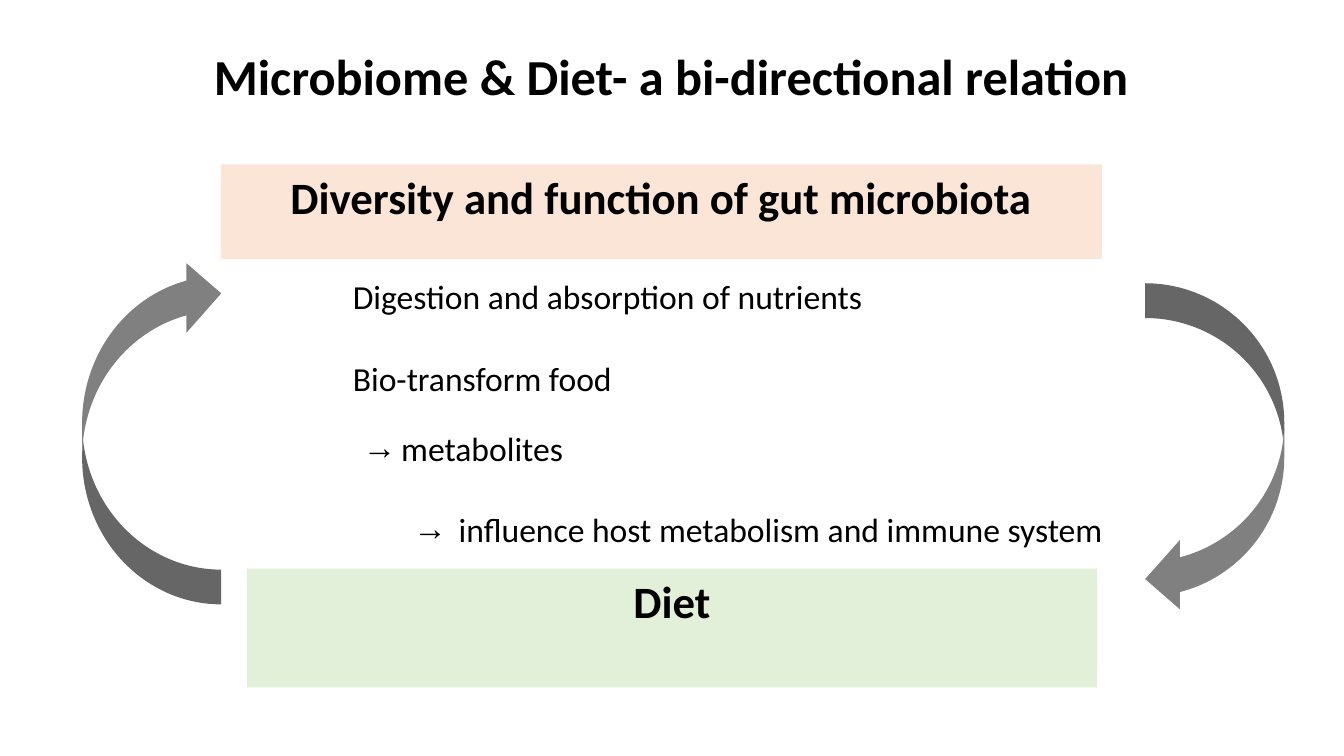
from lxml import etree
from pptx import Presentation
from pptx.dml.color import RGBColor
from pptx.enum.shapes import MSO_SHAPE as Preset
from pptx.enum.text import MSO_ANCHOR as Anchor, MSO_AUTO_SIZE as AutoSize, PP_ALIGN as Align
from pptx.oxml.ns import qn
from pptx.util import Inches, Pt

WIDTH, HEIGHT = Inches(13.333), Inches(7.5)
FONT = "Calibri"
BLACK = RGBColor(0x00, 0x00, 0x00)
PEACH = RGBColor(0xFB, 0xE5, 0xD6)
GREEN = RGBColor(0xE2, 0xF0, 0xD9)
GRAY = RGBColor(0x80, 0x80, 0x80)
LINE_GAP = 29.3  # one empty line of 24 pt text


def frame(left, top, width, height):
    """Turn percentages of the slide's size into lengths."""
    return (int(WIDTH * left / 100), int(HEIGHT * top / 100),
            int(WIDTH * width / 100), int(HEIGHT * height / 100))


def place(shape, area):
    shape.left, shape.top, shape.width, shape.height = frame(*area)


def prepare(text_frame):
    text_frame.word_wrap = True
    text_frame.auto_size = AutoSize.NONE
    text_frame.vertical_anchor = Anchor.TOP


def write(paragraph, text, size=24, bold=False, align=Align.LEFT, before=0,
          level=0, margin=0, hanging=0, bullet=None):
    """Fill a paragraph with text and set its whole format."""
    paragraph.alignment = align
    paragraph.level = level
    paragraph.line_spacing = 1.0
    paragraph.space_before = Pt(before)
    paragraph.space_after = Pt(0)
    properties = paragraph._p.get_or_add_pPr()
    properties.set("marL", str(Inches(margin)))
    properties.set("indent", str(-Inches(hanging)))
    if bullet:
        etree.SubElement(properties, qn("a:buChar")).set("char", bullet)
    else:
        etree.SubElement(properties, qn("a:buNone"))
    run = paragraph.add_run()
    run.text = text
    run.font.name = FONT
    run.font.size = Pt(size)
    run.font.bold = bold
    run.font.color.rgb = BLACK


def add_preset(slide, preset, area, color):
    shape = slide.shapes.add_shape(preset, *frame(*area))
    shape.shadow.inherit = False
    shape.fill.solid()
    shape.fill.fore_color.rgb = color
    shape.line.fill.background()
    return shape


def add_band(slide, text, area, color):
    band = add_preset(slide, Preset.RECTANGLE, area, color)
    prepare(band.text_frame)
    write(band.text_frame.paragraphs[0], text, size=32, bold=True, align=Align.CENTER)


def add_cycle_arrow(slide, area, rotation):
    arrow = add_preset(slide, Preset.CURVED_DOWN_ARROW, area, GRAY)
    arrow.rotation = rotation


def fill_title(title, text, area):
    place(title, area)
    prepare(title.text_frame)
    write(title.text_frame.paragraphs[0], text, size=36, bold=True, align=Align.CENTER)


def fill_list(body, items, area):
    """Write (text, format) items, one empty line apart."""
    place(body, area)
    prepare(body.text_frame)
    for index, (text, style) in enumerate(items):
        paragraphs = body.text_frame.paragraphs
        paragraph = body.text_frame.add_paragraph() if index else paragraphs[0]
        write(paragraph, text, before=LINE_GAP if index else 0, **style)


def main():
    presentation = Presentation()
    presentation.slide_width, presentation.slide_height = WIDTH, HEIGHT
    two_content = presentation.slide_layouts[3]
    slide = presentation.slides.add_slide(two_content)
    title, roles, effects = slide.placeholders
    for placeholder in list(slide.placeholders)[3:]:
        placeholder.element.getparent().remove(placeholder.element)

    # Title
    fill_title(title, "Microbiome & Diet- a bi-directional relation",
               (9.53, 5.33, 80.85, 9.47))

    # The two ends of the relation
    add_band(slide, "Diversity and function of gut microbiota",
             (16.43, 21.73, 65.55, 12.53), PEACH)
    add_band(slide, "Diet", (18.38, 75.2, 63.23, 15.73), GREEN)

    # What the microbiota does, and what follows from it
    fill_list(roles, [("Digestion and absorption of nutrients", {}),
                      ("Bio-transform food", {})],
              (25.5, 35.87, 40.95, 17.47))
    fill_list(effects, [
        ("metabolites", dict(margin=0.38, hanging=0.38, bullet="→")),
        ("influence host metabolism and immune system",
         dict(level=1, margin=0.95, hanging=0.45, bullet="→")),
    ], (26.25, 55.87, 58.95, 17.47))

    # Arrows closing the cycle
    add_cycle_arrow(slide, (78.08, 50.13, 24.6, 18.4), 90)
    add_cycle_arrow(slide, (-1.58, 47.87, 25.73, 18.4), 270)

    presentation.save("out.pptx")


if __name__ == "__main__":
    main()
